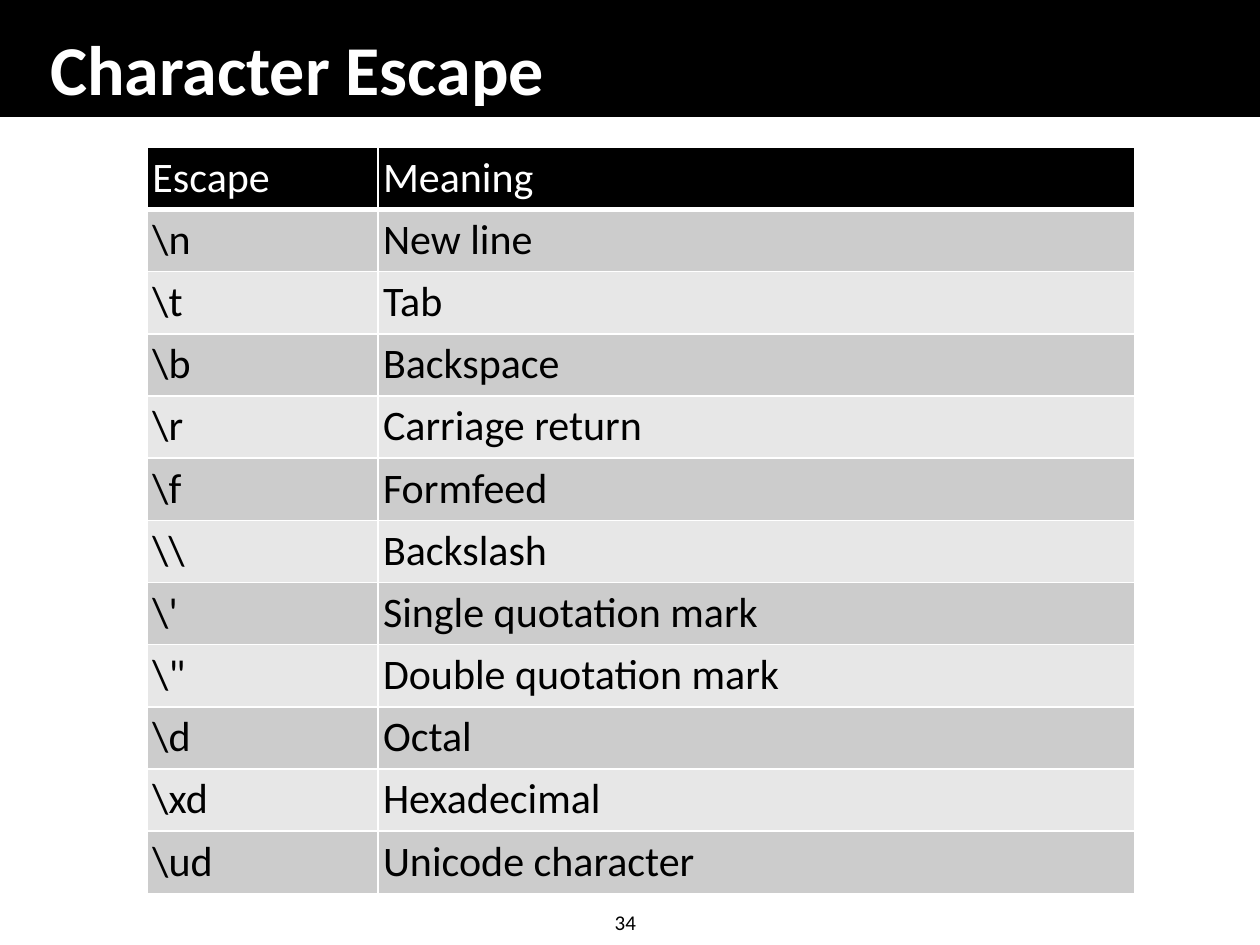
from typing import NamedTuple

from lxml.etree import SubElement
from pptx import Presentation
from pptx.dml.color import RGBColor
from pptx.enum.shapes import MSO_SHAPE as Preset
from pptx.enum.text import MSO_ANCHOR as Anchor, MSO_AUTO_SIZE as AutoSize, PP_ALIGN as Align
from pptx.oxml.ns import qn
from pptx.util import Inches, Pt

COLORS = {
    "black": "000000",
    "white": "FFFFFF",
    "odd_row": "CCCCCC",
    "even_row": "E7E7E7",
}
FONT = "Calibri"
COLUMN_WIDTHS = (1.83, 6.01)
TABLE_HEIGHT = 5.92
CELL_INSET = Inches(0.04)


class EscapeRow(NamedTuple):
    escape: str
    meaning: str


ROWS = [
    EscapeRow("Escape", "Meaning"),
    EscapeRow(r"\n", "New line"),
    EscapeRow(r"\t", "Tab"),
    EscapeRow(r"\b", "Backspace"),
    EscapeRow(r"\r", "Carriage return"),
    EscapeRow(r"\f", "Formfeed"),
    EscapeRow(r"\\", "Backslash"),
    EscapeRow(r"\'", "Single quotation mark"),
    EscapeRow(r"\"", "Double quotation mark"),
    EscapeRow(r"\d", "Octal"),
    EscapeRow(r"\xd", "Hexadecimal"),
    EscapeRow(r"\ud", "Unicode character"),
]


def rgb(name: str) -> RGBColor:
    return RGBColor.from_string(COLORS[name])


def write(frame, text: str, size: float, color: str, bold: bool = False, align=Align.LEFT) -> None:
    frame.text = text
    paragraph = frame.paragraphs[0]
    paragraph.alignment = align
    font = paragraph.runs[0].font
    font.name, font.size, font.bold = FONT, Pt(size), bold
    font.color.rgb = rgb(color)


def add_borders(cell, bottom_width: float) -> None:
    """Draw white borders; call before the fill, which must follow them."""
    properties = cell._tc.get_or_add_tcPr()
    for side, width in (("L", 1), ("R", 1), ("T", 1), ("B", bottom_width)):
        border = SubElement(properties, qn(f"a:ln{side}"), w=str(Pt(width)))
        fill = SubElement(border, qn("a:solidFill"))
        SubElement(fill, qn("a:srgbClr"), val=COLORS["white"])


def fill_cell(cell, text: str, row_index: int) -> None:
    is_header = row_index == 0
    add_borders(cell, 3 if is_header else 1)
    band = "odd_row" if row_index % 2 else "even_row"
    cell.fill.solid()
    cell.fill.fore_color.rgb = rgb("black" if is_header else band)
    cell.margin_left = cell.margin_right = CELL_INSET
    cell.margin_top = cell.margin_bottom = CELL_INSET
    write(cell.text_frame, text, 24, "white" if is_header else "black")


def add_escape_table(slide) -> None:
    table = slide.shapes.add_table(
        len(ROWS), len(COLUMN_WIDTHS), Inches(1.17), Inches(1.17),
        Inches(sum(COLUMN_WIDTHS)), Inches(TABLE_HEIGHT),
    ).table
    for column, width in zip(table.columns, COLUMN_WIDTHS):
        column.width = Inches(width)
    for row_index, entry in enumerate(ROWS):
        table.rows[row_index].height = Inches(TABLE_HEIGHT / len(ROWS))
        for column_index, text in enumerate(entry):
            fill_cell(table.cell(row_index, column_index), text, row_index)


def main() -> None:
    deck = Presentation()
    deck.slide_width, deck.slide_height = Inches(10), Inches(7.5)
    slide = deck.slides.add_slide(deck.slide_layouts[5])

    # Header bar, behind the title
    header_bar = slide.shapes.add_shape(Preset.RECTANGLE, 0, 0, Inches(10), Inches(0.92))
    header_bar.shadow.inherit = False
    header_bar.fill.solid()
    header_bar.fill.fore_color.rgb = rgb("black")
    header_bar.line.color.rgb = rgb("black")
    header_bar.line.width = Pt(1)

    title = slide.shapes.title
    title.element.addprevious(header_bar.element)
    title.left, title.top = Inches(0.3), Inches(0.21)
    title.width, title.height = Inches(9.36), Inches(0.71)
    write(title.text_frame, "Character Escape", 40, "white", bold=True)
    title.text_frame.vertical_anchor = Anchor.BOTTOM
    title.text_frame.auto_size = AutoSize.NONE

    # Page number
    page_number = slide.shapes.add_textbox(Inches(4.78), Inches(7.17), Inches(0.41), Inches(0.3))
    page_number.text_frame.word_wrap = False
    page_number.text_frame.auto_size = AutoSize.SHAPE_TO_FIT_TEXT
    write(page_number.text_frame, "34", 12, "black")

    # Escape sequences
    add_escape_table(slide)

    deck.save("out.pptx")


if __name__ == "__main__":
    main()
